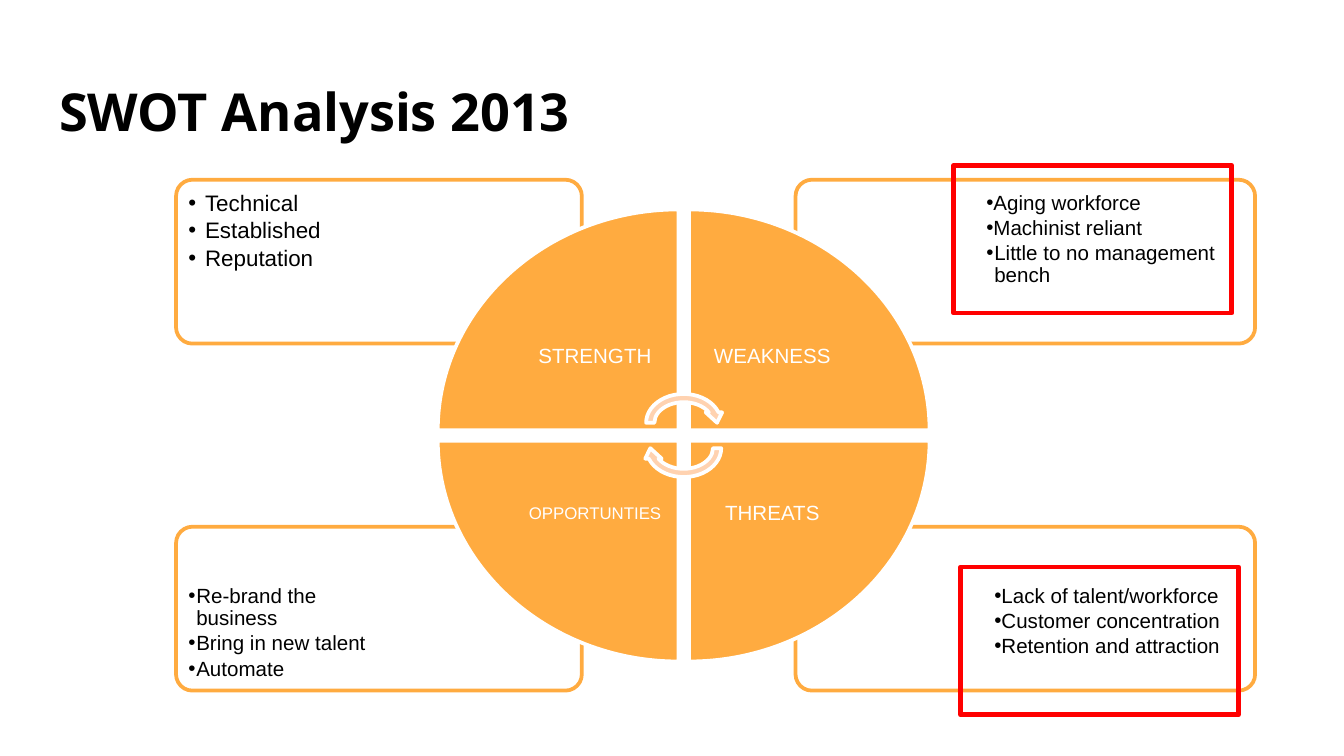
from lxml import etree
from pptx import Presentation
from pptx.dml.color import RGBColor
from pptx.enum.shapes import MSO_SHAPE
from pptx.enum.text import MSO_ANCHOR, MSO_AUTO_SIZE, PP_ALIGN
from pptx.oxml.ns import qn
from pptx.util import Pt

ROUNDED, RECT, ARROW = (MSO_SHAPE.ROUNDED_RECTANGLE, MSO_SHAPE.RECTANGLE,
                        MSO_SHAPE.CIRCULAR_ARROW)
TOP, MIDDLE = MSO_ANCHOR.TOP, MSO_ANCHOR.MIDDLE
LEFT, CENTER = PP_ALIGN.LEFT, PP_ALIGN.CENTER
NO_FIT = MSO_AUTO_SIZE.NONE
KAPPA = 0.55

COLORS = {"orange": "FFAB40", "peach": "FFD2B0", "red": "FF0000",
          "white": "FFFFFF", "black": "000000"}

HANG = (4.3, -4.3)
WIDE = (9, -9)
PANELS = [
    ((426.2, 282.2, 246.2, 87.8), (99.6, 29, 4, 4), 11,
     [("Lack of talent/workforce", (4.3, 0)),
      ("Customer concentration", (4.3, 0)),
      ("Retention and attraction", (4.3, 0))]),
    ((94.3, 282.2, 217.4, 87.8), (4, 29, 100, 4), 11,
     [("Re-brand the business", HANG), ("Bring in new talent", HANG),
      ("Automate", HANG)]),
    ((426.2, 96.3, 246.2, 87.8), (99.6, 4.3, 4, 29), 11,
     [("Aging workforce", (0, 0)), ("Machinist reliant", (0, 0)),
      ("Little to no management bench", HANG)]),
    ((94.3, 96.3, 217.4, 87.8), (4, 4, 100, 29), 12,
     [("Technical", WIDE), ("Established", WIDE), ("Reputation", WIDE)]),
]
QUADRANTS = [("STRENGTH", -1, -1, 11), ("WEAKNESS", 1, -1, 11),
             ("THREATS", 1, 1, 11), ("OPPORTUNTIES", -1, 1, 9)]
HIGHLIGHTS = [(510.9, 88.6, 149, 79.2), (514.6, 303.8, 149, 79.2)]


def rgb(name):
    return RGBColor.from_string(COLORS[name])


def style(sp, fill, line, width, alpha=None):
    sp.shadow.inherit = False
    if fill:
        sp.fill.solid()
        sp.fill.fore_color.rgb = rgb(fill)
        if alpha:
            clr = sp.fill._xPr.find(".//" + qn("a:srgbClr"))
            etree.SubElement(clr, qn("a:alpha")).set("val", str(alpha * 1000))
    else:
        sp.fill.background()
    sp.line.color.rgb = rgb(line)
    sp.line.width = Pt(width)


def set_frame(sp, insets, anchor):
    tf = sp.text_frame
    tf.word_wrap = True
    tf.auto_size = NO_FIT
    tf.vertical_anchor = anchor
    (tf.margin_left, tf.margin_top,
     tf.margin_right, tf.margin_bottom) = [Pt(v) for v in insets]
    return tf


def write(p, text, size, color, font="Arial", bold=False, align=LEFT,
          spacing=0.9, after=0, bullet=None):
    p.alignment = align
    p.line_spacing = spacing
    p.space_before = Pt(0)
    p.space_after = Pt(after)
    if bullet:
        pPr = p._p.get_or_add_pPr()
        pPr.set("marL", str(Pt(bullet[0])))
        pPr.set("indent", str(Pt(bullet[1])))
        clr = etree.SubElement(pPr, qn("a:buClr"))
        etree.SubElement(clr, qn("a:srgbClr")).set("val", COLORS[color])
        etree.SubElement(pPr, qn("a:buFont")).set("typeface", font)
        etree.SubElement(pPr, qn("a:buChar")).set("char", "•")
    r = p.add_run()
    r.text = text
    r.font.name = font
    r.font.size = Pt(size)
    r.font.bold = bold
    r.font.color.rgb = rgb(color)


def add_title(s, box, text):
    sp = s.shapes.title
    sp.left, sp.top, sp.width, sp.height = [Pt(v) for v in box]
    tf = set_frame(sp, (7.2, 7.2, 7.2, 7.2), TOP)
    write(tf.paragraphs[0], text, 28, "black", font="Open Sans", bold=True,
          spacing=1)


def add_panel(s, box, insets, size, items):
    sp = s.shapes.add_shape(ROUNDED, *[Pt(v) for v in box])
    sp.adjustments[0] = 0.1
    style(sp, "white", "orange", 2, alpha=90)
    tf = set_frame(sp, insets, TOP)
    for i, (text, bullet) in enumerate(items):
        p = tf.add_paragraph() if i else tf.paragraphs[0]
        write(p, text, size, "black", after=0.15 * size, bullet=bullet)


def round_edge(sp):
    points = [(int(pt.get("x")), int(pt.get("y")))
              for pt in sp._element.iter(qn("a:pt"))]
    corner, start, end = points[:3]
    near = [a + KAPPA * (e - c) for a, e, c in zip(start, end, corner)]
    far = [e + KAPPA * (a - c) for a, e, c in zip(start, end, corner)]
    edge = list(sp._element.iter(qn("a:lnTo")))[1]
    curve = etree.Element(qn("a:cubicBezTo"))
    for x, y in (near, far, end):
        pt = etree.SubElement(curve, qn("a:pt"))
        pt.set("x", str(round(x)))
        pt.set("y", str(round(y)))
    edge.getparent().replace(edge, curve)


def add_quadrant(s, center, radii, gap, label, dx, dy, size):
    x = center[0] + dx * gap / 2
    y = center[1] + dy * gap / 2
    fb = s.shapes.build_freeform(Pt(x), Pt(y))
    fb.add_line_segments([(Pt(x + dx * radii[0]), Pt(y)),
                          (Pt(x), Pt(y + dy * radii[1]))], close=True)
    sp = fb.convert_to_shape()
    round_edge(sp)
    style(sp, "orange", "white", 2)
    insets = (46 if dx < 0 else 6.5, 46 if dy < 0 else 6.5,
              46 if dx > 0 else 6.5, 46 if dy > 0 else 6.5)
    tf = set_frame(sp, insets, MIDDLE)
    write(tf.paragraphs[0], label, size, "white", align=CENTER)


def add_wheel(s, box):
    left, top, width, height = box
    gap = 5.6
    center = (left + width / 2, top + height / 2)
    radii = ((width - gap) / 2, (height - gap) / 2)
    for quadrant in QUADRANTS:
        add_quadrant(s, center, radii, gap, *quadrant)
    w, h = 44.6, 35.3
    for shift, rotation in ((-6.8, 0), (6.8, 180)):
        sp = s.shapes.add_shape(ARROW, Pt(center[0] - w / 2),
                                Pt(center[1] + shift - h / 2), Pt(w), Pt(h))
        sp.rotation = rotation
        style(sp, "peach", "white", 2)


def add_highlight(s, box):
    sp = s.shapes.add_shape(RECT, *[Pt(v) for v in box])
    style(sp, None, "red", 2.5)


def main():
    prs = Presentation()
    prs.slide_width, prs.slide_height = Pt(720), Pt(405)
    s = prs.slides.add_slide(prs.slide_layouts[5])
    add_title(s, (24.5, 35.3, 671, 45.4), "SWOT Analysis 2013")
    for panel in PANELS:
        add_panel(s, *panel)
    add_wheel(s, (234.5, 112.2, 263.5, 242.2))
    for box in HIGHLIGHTS:
        add_highlight(s, box)
    prs.save("out.pptx")


if __name__ == "__main__":
    main()
